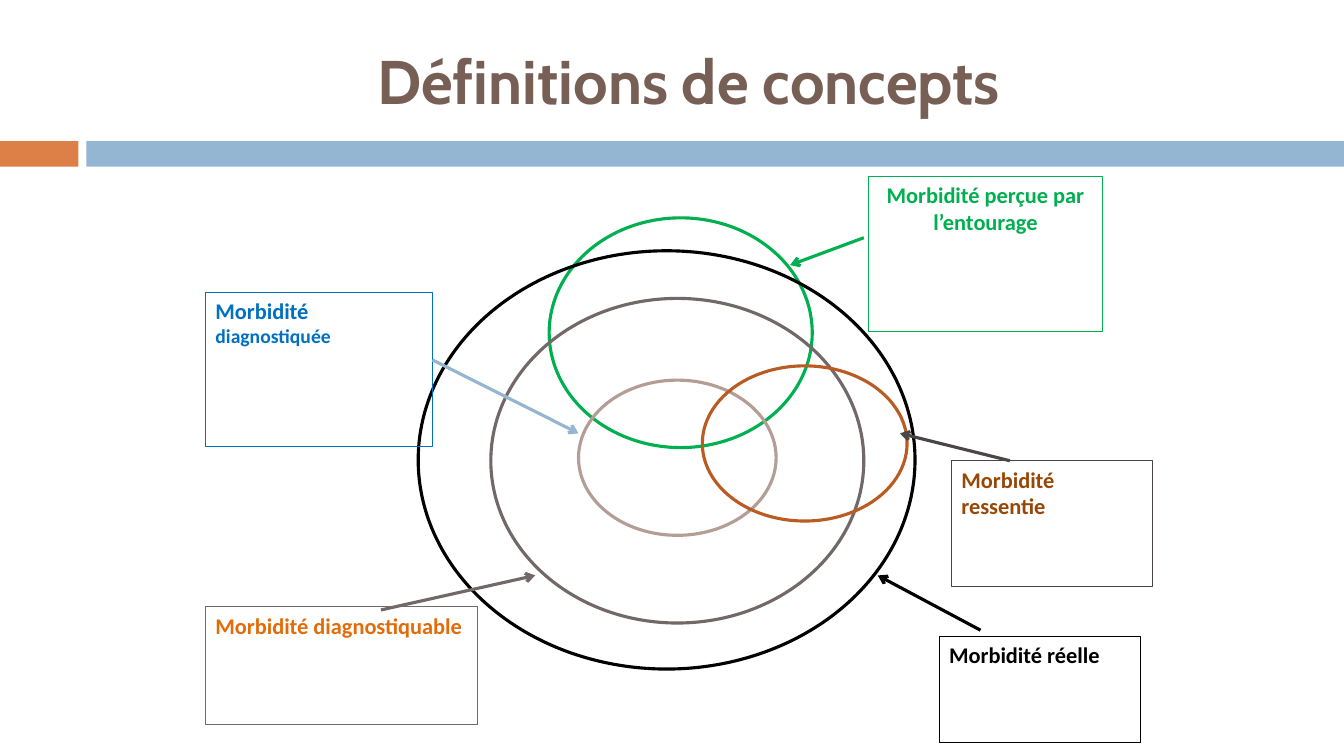
"""Build a slide of overlapping circles that defines kinds of morbidity."""
from dataclasses import dataclass

import pptx
import pptx.dml.color
import pptx.enum.shapes
import pptx.enum.text
import pptx.oxml
import pptx.oxml.ns
import pptx.util

Cm = pptx.util.Cm
Kind = pptx.enum.shapes.MSO_SHAPE
Align = pptx.enum.text.PP_ALIGN
Anchor = pptx.enum.text.MSO_ANCHOR

GREEN, BLACK, GREY, DARK, BLUE = "00B050", "000000", "726868", "4C4545", "0070C0"
SKY, ORANGE, BROWN, TAN, WHITE = "94B6D2", "DD8047", "775F55", "B39D94", "FFFFFF"


@dataclass
class Area:
    left: float
    top: float
    width: float
    height: float


@dataclass
class Run:
    text: str
    size: float
    color: str
    font: str = "Calibri"


@dataclass
class Ring:
    area: Area
    line: str
    fill: str | None = None


@dataclass
class Label:
    area: Area
    line: str
    runs: list[Run]
    align: Align = Align.LEFT


@dataclass
class Arrow:
    start: tuple[float, float]
    end: tuple[float, float]
    color: str


BARS = [
    (Area(0, 3.56, 1.98, 0.64), ORANGE),
    (Area(2.18, 3.56, 31.69, 0.64), SKY),
]

RINGS = [
    Ring(Area(13.84, 5.49, 6.63, 5.79), GREEN, WHITE),
    Ring(Area(14.58, 9.58, 4.98, 3.91), TAN),
    Ring(Area(10.54, 6.32, 12.52, 10.54), BLACK),
    Ring(Area(12.37, 7.52, 9.4, 8.18), GREY),
    Ring(Area(17.7, 9.22, 5.16, 3.91), "B95B22"),
]

LABELS = [
    Label(Area(21.89, 4.45, 5.89, 3.91), GREEN,
          [Run("Morbidité perçue par l’entourage", 16, GREEN)], Align.CENTER),
    Label(Area(23.98, 11.61, 5.07, 3.18), DARK,
          [Run("Morbidité ressentie", 16, "984806")]),
    Label(Area(23.67, 16.03, 5.07, 2.69), BLACK,
          [Run("Morbidité réelle", 16, BLACK)]),
    Label(Area(5.18, 15.29, 6.86, 2.97), GREY,
          [Run("Morbidité diagnostiquable", 16, "E36C0A")]),
    Label(Area(5.18, 7.37, 5.72, 3.89), BLUE,
          [Run("Morbidité ", 16, BLUE), Run("diagnostiquée", 14, BLUE)]),
]

ARROWS = [
    Arrow((9.6, 15.37), (13.49, 14.5), GREY),
    Arrow((10.9, 9.07), (14.58, 10.92), SKY),
    Arrow((21.77, 5.99), (19.91, 6.68), GREEN),
    Arrow((25.45, 11.61), (22.68, 10.92), DARK),
    Arrow((24.71, 15.88), (22.12, 14.5), BLACK),
]


def paint(target, color: str) -> None:
    target.rgb = pptx.dml.color.RGBColor.from_string(color)


def place(area: Area) -> list[int]:
    return [Cm(area.left), Cm(area.top), Cm(area.width), Cm(area.height)]


def draw(slide, kind: Kind, area: Area, fill: str | None = None,
         line: str | None = None, width: float = 0.75):
    shape = slide.shapes.add_shape(kind, *place(area))
    shape.shadow.inherit = False
    if fill:
        shape.fill.solid()
        paint(shape.fill.fore_color, fill)
    else:
        shape.fill.background()
    if line:
        paint(shape.line.color, line)
        shape.line.width = pptx.util.Pt(width)
    else:
        shape.line.fill.background()
    return shape


def write(shape, runs: list[Run], align: Align, anchor: Anchor) -> None:
    frame = shape.text_frame
    frame.word_wrap = True
    frame.vertical_anchor = anchor
    para = frame.paragraphs[0]
    para.alignment = align
    for item in runs:
        run = para.add_run()
        run.text = item.text
        run.font.name = item.font
        run.font.size = pptx.util.Pt(item.size)
        run.font.bold = True
        paint(run.font.color, item.color)


def point(slide, arrow: Arrow) -> None:
    ends = [Cm(value) for value in (*arrow.start, *arrow.end)]
    link = slide.shapes.add_connector(
        pptx.enum.shapes.MSO_CONNECTOR.STRAIGHT, *ends)
    paint(link.line.color, arrow.color)
    link.line.width = pptx.util.Pt(2.25)
    space = pptx.oxml.ns.nsdecls("a")
    stroke = link.line._get_or_add_ln()
    stroke.append(pptx.oxml.parse_xml(f'<a:tailEnd {space} type="arrow"/>'))
    link._element.spPr.append(pptx.oxml.parse_xml(f"<a:effectLst {space}/>"))


def main() -> None:
    deck = pptx.Presentation()
    deck.slide_width, deck.slide_height = Cm(33.87), Cm(19.05)
    slide = deck.slides.add_slide(deck.slide_layouts[6])
    for area, color in BARS:
        draw(slide, Kind.RECTANGLE, area, fill=color)
    title = slide.shapes.add_textbox(*place(Area(2.26, 0.64, 30.2, 2.74)))
    write(title, [Run("Définitions de concepts", 44, BROWN, "Cabin")],
          Align.CENTER, Anchor.MIDDLE)
    for ring in RINGS:
        draw(slide, Kind.OVAL, ring.area, ring.fill, ring.line, 2.25)
    for label in LABELS:
        box = draw(slide, Kind.RECTANGLE, label.area, line=label.line)
        write(box, label.runs, label.align, Anchor.TOP)
    for arrow in ARROWS:
        point(slide, arrow)
    deck.save("out.pptx")


if __name__ == "__main__":
    main()
